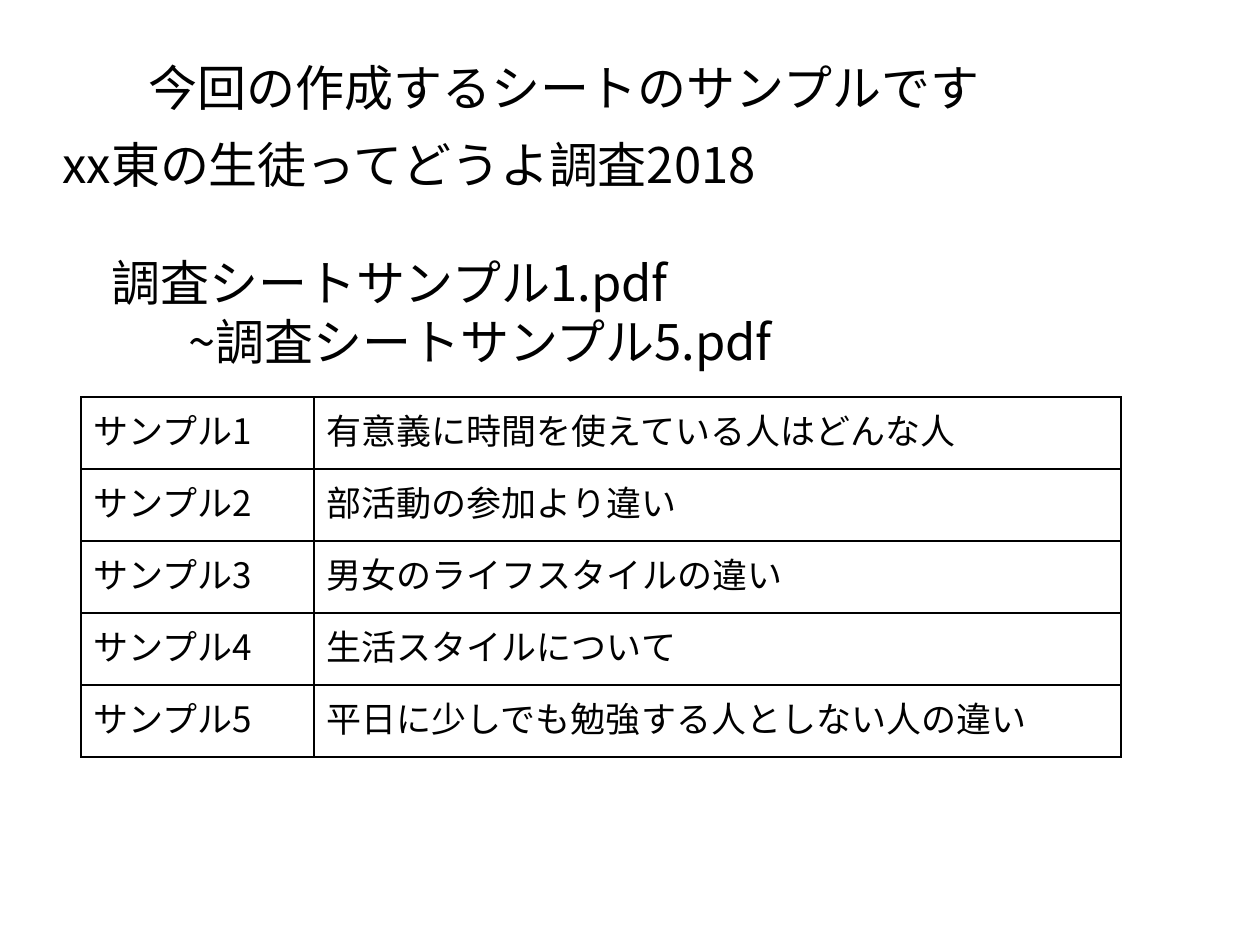
from pptx import Presentation
from pptx.dml.color import RGBColor
from pptx.enum.text import MSO_ANCHOR, MSO_AUTO_SIZE, PP_ALIGN
from pptx.oxml import parse_xml
from pptx.oxml.ns import nsdecls, qn
from pptx.util import Emu, Pt

BLACK = RGBColor(0, 0, 0)
WHITE = RGBColor(255, 255, 255)
NOTO = "Noto Sans CJK JP"
SAMPLES = [
    "有意義に時間を使えている⼈はどんな⼈",
    "部活動の参加より違い",
    "男⼥のライフスタイルの違い",
    "生活スタイルについて",
    "平日に少しでも勉強する人としない人の違い",
]


def px(n):
    return Emu(round(n * 914400 / 126))


def place(s, box):
    s.left, s.top, s.width, s.height = map(px, box)


def write(p, text, size=28, font=NOTO, indent=0, before=0):
    p.alignment = PP_ALIGN.LEFT
    p.space_before = Pt(before)
    if indent:
        p._p.get_or_add_pPr().set("marL", str(px(indent)))
    r = p.add_run()
    r.text = text
    r.font.size = Pt(size)
    r.font.name = font
    r.font.color.rgb = BLACK
    if font == NOTO:
        r._r.get_or_add_rPr().find(qn("a:latin")).addnext(
            parse_xml(f'<a:ea {nsdecls("a")} typeface="{font}"/>'))


def add_title(sl, box):
    s = sl.shapes.title
    place(s, box)
    tf = s.text_frame
    tf.auto_size = MSO_AUTO_SIZE.NONE
    tf.vertical_anchor = MSO_ANCHOR.BOTTOM
    write(tf.paragraphs[0], "今回の作成するシートのサンプルです", font="Arial")


def add_intro(sl, box):
    tf = sl.shapes.add_textbox(*map(px, box)).text_frame
    tf.word_wrap = True
    write(tf.paragraphs[0], "xx東の生徒ってどうよ調査2018")
    write(tf.add_paragraph(), "調査シートサンプル1.pdf", indent=49, before=34)
    write(tf.add_paragraph(), "~調査シートサンプル5.pdf", indent=126)


def add_borders(cell):
    tcPr = cell._tc.get_or_add_tcPr()
    for i, side in enumerate(("lnL", "lnR", "lnT", "lnB")):
        tcPr.insert(i, parse_xml(
            f'<a:{side} {nsdecls("a")} w="{Pt(1)}"><a:solidFill>'
            f'<a:srgbClr val="{BLACK}"/></a:solidFill></a:{side}>'))


def add_samples(sl, box, label_w):
    tbl = sl.shapes.add_table(len(SAMPLES), 2, *map(px, box)).table
    tbl.first_row = tbl.horz_banding = False
    tbl.columns[0].width = px(label_w)
    tbl.columns[1].width = px(box[2] - label_w)
    for i, topic in enumerate(SAMPLES):
        for j, text in enumerate((f"サンプル{i + 1}", topic)):
            cell = tbl.cell(i, j)
            cell.fill.solid()
            cell.fill.fore_color.rgb = WHITE
            cell.vertical_anchor = MSO_ANCHOR.MIDDLE
            cell.margin_bottom = px(14)
            write(cell.text_frame.paragraphs[0], text, size=20)
            add_borders(cell)


def main():
    prs = Presentation()
    prs.slide_width, prs.slide_height = px(1260), px(945)
    sl = prs.slides.add_slide(prs.slide_layouts[5])
    add_title(sl, (136, 39, 929, 84))
    add_intro(sl, (50, 128, 1166, 251))
    add_samples(sl, (81, 397, 1040, 360), 233)
    prs.save("out.pptx")


if __name__ == "__main__":
    main()
